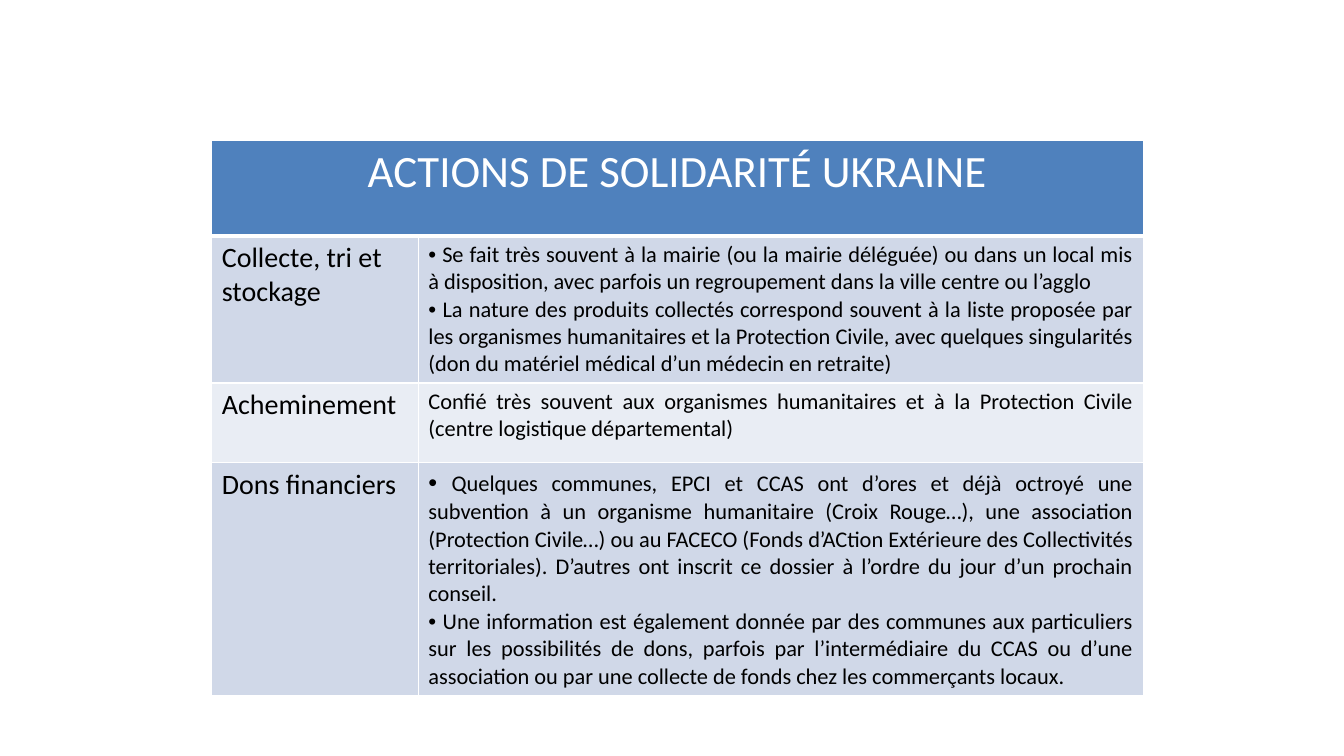
from lxml import etree
from pptx import Presentation, util as u
from pptx.dml.color import RGBColor
from pptx.enum import text
from pptx.oxml import ns

HUES = {"head": "4F81BD", "dark": "D0D8E8", "light": "E9EDF4",
        "white": "FFFFFF", "black": "000000"}
FONT = "Calibri"
TITLE = "ACTIONS DE SOLIDARITÉ UKRAINE"
COLS = [2.05, 7.19]
ROWS = [0.95, 1.46, 0.79, 2.3]

# Label, bulleted or not, paragraphs; each paragraph lists (text, size) runs
TOPICS = [
    ("Collecte, tri et stockage", True, [
        [(" Se fait très souvent à la mairie (ou la mairie déléguée) ou dans un "
          "local mis à disposition, avec parfois un regroupement dans la ville "
          "centre ou l’agglo", 16)],
        [(" La nature des produits collectés correspond souvent à la liste "
          "proposée par les organismes humanitaires et la Protection Civile, "
          "avec quelques singularités (don du matériel médical d’un médecin en "
          "retraite)", 16)]]),
    ("Acheminement", False, [
        [("Confié très souvent aux organismes humanitaires et à la Protection "
          "Civile (centre logistique départemental)", 16)]]),
    ("Dons financiers", True, [
        [(" ", 18),
         ("Quelques communes, EPCI et CCAS ont d’ores et déjà octroyé une "
          "subvention à un organisme humanitaire (Croix Rouge…), une association "
          "(Protection Civile…) ou au FACECO (Fonds d’ACtion Extérieure des "
          "Collectivités territoriales). D’autres ont inscrit ce dossier à "
          "l’ordre du jour d’un prochain conseil.", 16)],
        [(" Une information est également donnée par des communes aux "
          "particuliers sur les possibilités de dons, parfois par "
          "l’intermédiaire du CCAS ou d’une association ou par une collecte de "
          "fonds chez les commerçants locaux.", 16)]]),
]


def hue(name):
    return RGBColor.from_string(HUES[name])


def paint(cell, fill, base=1):
    """Give a cell white borders and a solid fill."""
    props = cell._tc.get_or_add_tcPr()
    for side in "LRTB":
        width = base if side == "B" else 1
        line = etree.SubElement(props, ns.qn("a:ln" + side), w=str(u.Pt(width)))
        solid = etree.SubElement(line, ns.qn("a:solidFill"))
        etree.SubElement(solid, ns.qn("a:srgbClr"), val=HUES["white"])
    cell.fill.solid()
    cell.fill.fore_color.rgb = hue(fill)


def write(cell, paras, align, ink="black", dots=False):
    """Fill a cell with paragraphs made of (text, size) runs."""
    frame = cell.text_frame
    for i, runs in enumerate(paras):
        para = frame.add_paragraph() if i else frame.paragraphs[0]
        para.alignment = align
        if dots:
            props = para._p.get_or_add_pPr()
            props.set("marL", "0")
            props.set("indent", "0")
            etree.SubElement(props, ns.qn("a:buFont"), typeface="Arial")
            etree.SubElement(props, ns.qn("a:buChar"), char="•")
        for words, size in runs:
            run = para.add_run()
            run.text = words
            font = run.font
            font.name, font.size, font.bold = FONT, u.Pt(size), False
            font.color.rgb = hue(ink)


def add_grid(slide, left, top):
    """Table of actions: merged heading, then one row per topic."""
    grid = slide.shapes.add_table(
        len(ROWS), len(COLS), u.Inches(left), u.Inches(top),
        u.Inches(sum(COLS)), u.Inches(sum(ROWS))).table
    grid.first_row = grid.horz_banding = False
    for col, width in zip(grid.columns, COLS):
        col.width = u.Inches(width)
    for row, height in zip(grid.rows, ROWS):
        row.height = u.Inches(height)

    # Heading
    head = grid.cell(0, 0)
    head.merge(grid.cell(0, 1))
    for cell in grid.rows[0].cells:
        paint(cell, "head", 3)
    write(head, [[(TITLE, 32)]], text.PP_ALIGN.CENTER, "white")

    # Topics
    for i, (label, dots, paras) in enumerate(TOPICS, 1):
        name, body = grid.rows[i].cells
        for cell in (name, body):
            paint(cell, "dark" if i % 2 else "light")
        write(name, [[(label, 20)]], text.PP_ALIGN.LEFT)
        write(body, paras, text.PP_ALIGN.JUSTIFY, dots=dots)


def main():
    deck = Presentation()
    deck.slide_width, deck.slide_height = u.Inches(13.33), u.Inches(7.5)
    slide = deck.slides.add_slide(deck.slide_layouts[6])
    add_grid(slide, 2.1, 1.39)
    deck.save("out.pptx")


if __name__ == "__main__":
    main()
